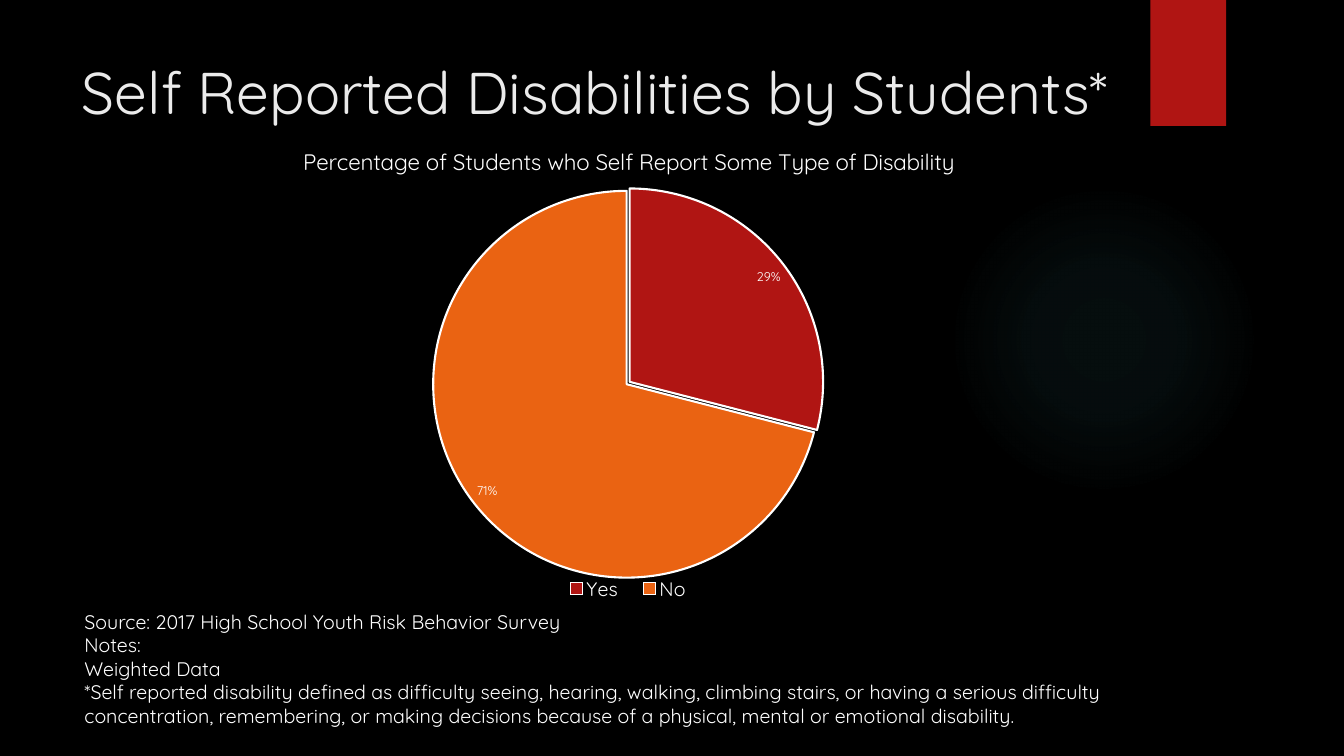
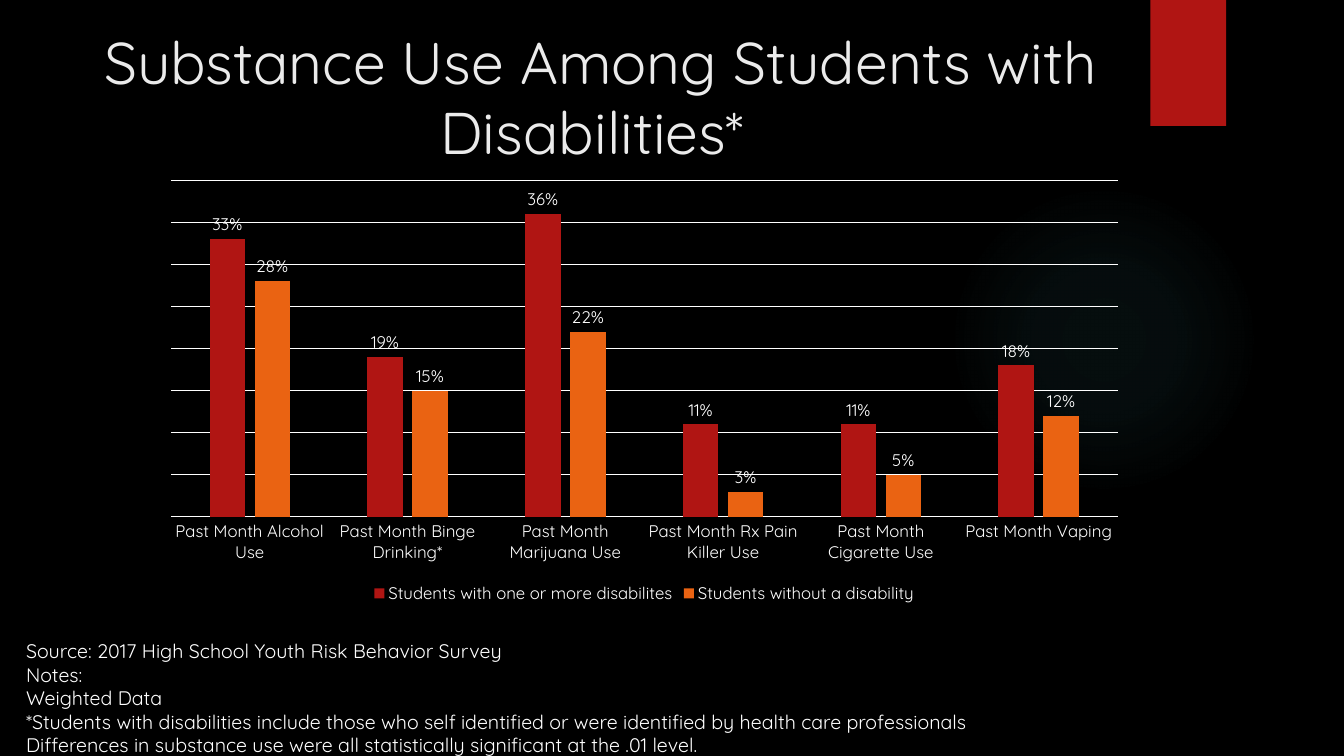
from dataclasses import dataclass

from lxml import etree
from pptx import Presentation, util as u
from pptx.chart.data import CategoryChartData
from pptx.dml.color import RGBColor
from pptx.enum import chart as ch, shapes, text
from pptx.oxml import parse_xml
from pptx.oxml.ns import nsdecls, qn


@dataclass(frozen=True)
class Theme:
    font: str = "Quicksand"
    back: RGBColor = RGBColor(0x00, 0x00, 0x00)
    white: RGBColor = RGBColor(0xFF, 0xFF, 0xFF)
    heading: RGBColor = RGBColor(0xEB, 0xEB, 0xEB)
    red: RGBColor = RGBColor(0xB0, 0x15, 0x13)
    orange: RGBColor = RGBColor(0xEA, 0x63, 0x12)
    glow: str = "50B9C1"
    title_pt: int = 42
    chart_title_pt: int = 16
    body_pt: int = 14
    axis_pt: int = 12
    label_pt: int = 9


theme = Theme()
prs = Presentation()
prs.slide_width, prs.slide_height = u.Inches(13.33), u.Inches(7.5)


def area(left, top, width, height):
    """Turn percentages of the slide's size into lengths."""
    w, h = prs.slide_width, prs.slide_height
    return [int(share * side / 100)
            for share, side in zip((left, top, width, height), (w, h, w, h))]


def write(tf, *lines, size, color=theme.white, align=text.PP_ALIGN.LEFT):
    for i, line in enumerate(lines):
        p = tf.add_paragraph() if i else tf.paragraphs[0]
        p.alignment = align
        r = p.add_run()
        r.text = line
        r.font.name, r.font.size, r.font.bold = theme.font, u.Pt(size), False
        r.font.color.rgb = color


# Shared look: black background, faint glow and red tab on the layout
prs.slide_master.background.fill.solid()
prs.slide_master.background.fill.fore_color.rgb = theme.back
layout = prs.slide_layouts[5]
slides = [prs.slides.add_slide(layout) for _ in range(2)]

glow = slides[0].shapes.add_shape(shapes.MSO_SHAPE.OVAL, *area(70.59, 24.4, 23.1, 41.07))
tab = slides[0].shapes.add_shape(shapes.MSO_SHAPE.RECTANGLE, *area(85.6, 0, 5.63, 16.67))
tab.fill.solid()
tab.fill.fore_color.rgb = theme.red
stops = "".join(
    f'<a:gs pos="{pos}000"><a:srgbClr val="{theme.glow}"><a:alpha val="{alpha}000"/></a:srgbClr></a:gs>'
    for pos, alpha in ((0, 7), (36, 6), (69, 0)))
glow.element.spPr.find(qn("a:prstGeom")).addnext(parse_xml(
    f'<a:gradFill {nsdecls("a")}><a:gsLst>{stops}</a:gsLst><a:path path="circle">'
    '<a:fillToRect l="50000" t="50000" r="50000" b="50000"/></a:path></a:gradFill>'))
for i, sp in enumerate((glow, tab)):
    sp.line.fill.background()
    sp.shadow.inherit = False
    layout.shapes.element.insert(2 + i, sp.element)

SOURCE = ("Source: 2017 High School Youth Risk Behavior Survey", "Notes:", "Weighted Data")
pages = [
    dict(
        title="Self Reported Disabilities by Students* ",
        title_at=(5.33, 6.67, 82.22, 12.27),
        align=text.PP_ALIGN.LEFT,
        kind=ch.XL_CHART_TYPE.PIE,
        chart_at=(5.93, 16, 81.62, 68),
        cats=["Yes", "No"],
        series={"Series 1": (0.29, 0.71)},
        legend_pt=theme.body_pt,
        label_pt=theme.label_pt,
        label_pos=ch.XL_LABEL_POSITION.BEST_FIT,
        notes=["*Self reported disability defined as difficulty seeing, hearing, walking, "
               "climbing stairs, or having a serious difficulty concentration, remembering, or "
               "making decisions because of a physical, mental or emotional disability."],
        notes_at=(5.55, 80, 82, 17.07),
    ),
    dict(
        title="Substance Use Among Students with Disabilities* ",
        title_at=(6.08, 2.67, 77.19, 20.4),
        align=text.PP_ALIGN.CENTER,
        kind=ch.XL_CHART_TYPE.COLUMN_CLUSTERED,
        chart_at=(11.25, 22.67, 73.37, 57.73),
        cats=["Past Month Alcohol Use", "Past Month Binge Drinking*",
              "Past Month Marijuana Use", "Past Month Rx Pain Killer Use",
              "Past Month Cigarette Use", "Past Month Vaping"],
        series={"Students with one or more disabilites": (0.33, 0.19, 0.36, 0.11, 0.11, 0.18),
                "Students without a disability": (0.28, 0.15, 0.22, 0.03, 0.05, 0.12)},
        legend_pt=theme.axis_pt,
        label_pt=theme.axis_pt,
        label_pos=ch.XL_LABEL_POSITION.OUTSIDE_END,
        notes=["*Students with disabilities include those who self identified or were "
               "identified by health care professionals",
               "Differences in substance use were all statistically significant at the .01 level."],
        notes_at=(1.2, 83.87, 98.8, 17.07),
    ),
]

charts = []
for s, page in zip(slides, pages):
    title = s.shapes.title
    title.left, title.top, title.width, title.height = area(*page["title_at"])
    title.text_frame.vertical_anchor = text.MSO_ANCHOR.TOP
    title.text_frame.auto_size = text.MSO_AUTO_SIZE.NONE
    write(title.text_frame, page["title"], size=theme.title_pt, color=theme.heading,
          align=page["align"])

    data = CategoryChartData(number_format="0%")
    data.categories = page["cats"]
    for name, values in page["series"].items():
        data.add_series(name, values)
    chart = s.shapes.add_chart(page["kind"], *area(*page["chart_at"]), data).chart
    chart.has_title = False
    chart.has_legend = True
    chart.legend.position = ch.XL_LEGEND_POSITION.BOTTOM
    chart.legend.include_in_layout = False
    plot = chart.plots[0]
    plot.has_data_labels = True
    labels = plot.data_labels
    labels.show_value, labels.show_percentage = True, False
    labels.number_format, labels.number_format_is_linked = "0%", False
    labels.position = page["label_pos"]
    for font, size in ((chart.font, 10), (chart.legend.font, page["legend_pt"]),
                       (labels.font, page["label_pt"])):
        font.name, font.size = theme.font, u.Pt(size)
        font.color.rgb = theme.white
    charts.append(chart)

    tf = s.shapes.add_textbox(*area(*page["notes_at"])).text_frame
    tf.word_wrap = True
    tf.auto_size = text.MSO_AUTO_SIZE.SHAPE_TO_FIT_TEXT
    write(tf, *SOURCE, *page["notes"], size=theme.body_pt)

pie, columns = charts
colors = (theme.red, theme.orange)

# Pie: white-edged slices, with title, plot and legend placed by shares of the chart
pie.has_title = True
write(pie.chart_title.text_frame, "Percentage of Students who Self Report Some Type of Disability",
      size=theme.chart_title_pt, align=text.PP_ALIGN.CENTER)
slices = pie.plots[0].series[0]
pie.plots[0].vary_by_categories = True
for i, color in enumerate(colors):
    fmt = slices.points[i].format
    fmt.fill.solid()
    fmt.fill.fore_color.rgb = color
    fmt.line.color.rgb = theme.white
    fmt.line.width = u.Pt(1.5)
explosion = etree.Element(qn("c:explosion"), val="1")
slices._element.find(qn("c:dPt")).addprevious(explosion)

chart_xml = pie._chartSpace.find(qn("c:chart"))
for part, index, places in (
        ("c:title", 1, dict(x=0.2, y=0.04)),
        ("c:plotArea", 0, dict(x=0.32, y=0.13, w=0.36, h=0.76)),
        ("c:legend", 1, dict(x=0.43, y=0.87, w=0.14, h=0.08))):
    parent = chart_xml.find(qn(part))
    for old in parent.findall(qn("c:layout")):
        parent.remove(old)
    target = '<c:layoutTarget val="inner"/>' if part == "c:plotArea" else ""
    modes = '<c:xMode val="edge"/><c:yMode val="edge"/>'
    sizes = "".join(f'<c:{key} val="{value}"/>' for key, value in places.items())
    parent.insert(index, parse_xml(
        f'<c:layout {nsdecls("c")}><c:manualLayout>{target}{modes}{sizes}'
        '</c:manualLayout></c:layout>'))

# Columns: two series over white gridlines, value axis hidden
plot = columns.plots[0]
plot.gap_width, plot.overlap, plot.vary_by_categories = 219, -27, False
for series, color in zip(plot.series, colors):
    series.format.fill.solid()
    series.format.fill.fore_color.rgb = color
cat, val = columns.category_axis, columns.value_axis
cat.major_tick_mark = ch.XL_TICK_MARK.NONE
cat.tick_labels.font.name = theme.font
cat.tick_labels.font.size = u.Pt(theme.axis_pt)
cat.tick_labels.font.color.rgb = theme.white
val.visible = False
val.minimum_scale, val.maximum_scale, val.major_unit = 0, 0.4, 0.05
val.has_major_gridlines = True
for line in (cat.format.line, val.major_gridlines.format.line):
    line.color.rgb = theme.white
    line.width = u.Pt(0.75)

prs.save("out.pptx")
